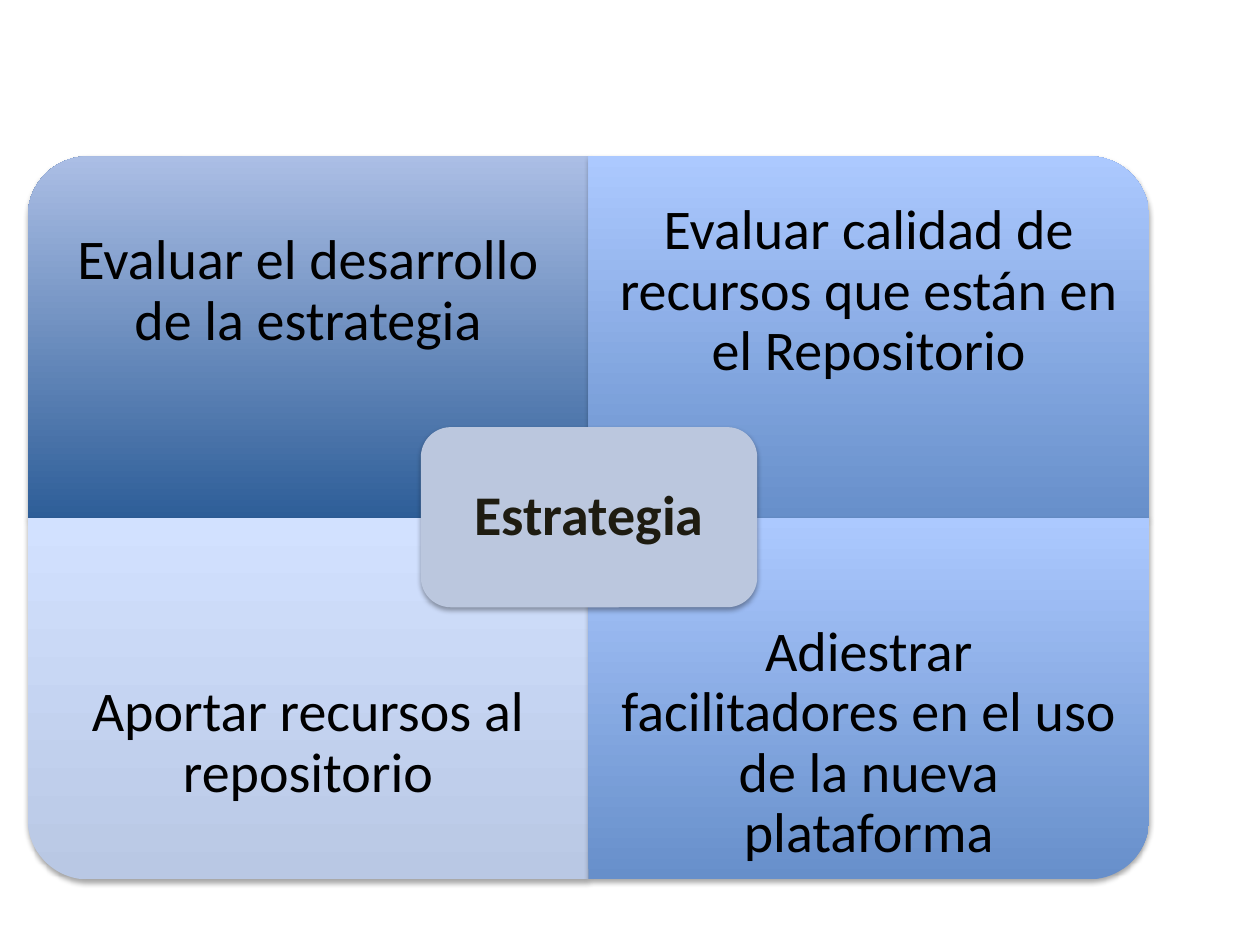
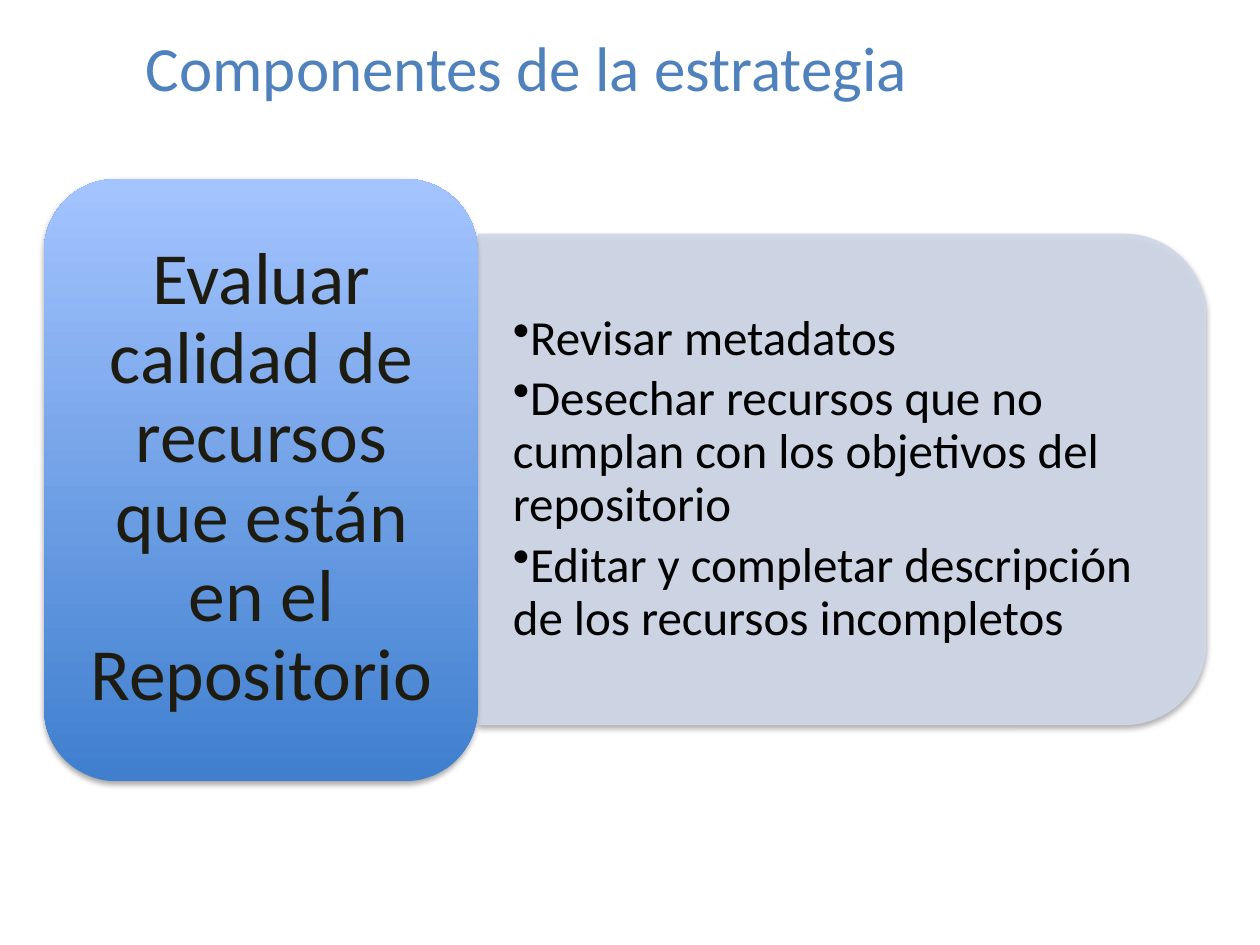
from lxml import etree
from pptx import Presentation
from pptx.dml.color import RGBColor
from pptx.enum import shapes, text
from pptx.oxml import ns
from pptx.util import Inches, Pt

FONT = "Calibri"
COLORS = {
    "black": "000000", "ink": "1E1C11", "title": "4F81BD",
    "hub": "BBC7DE", "detail": "D0D8E8",
    "deep": ("2E5E98", "ABBEE5"), "mid": ("678FCA", "ACC9FF"),
    "pale": ("B9C8E4", "D2E1FF"), "block": ("3F7FCE", "A4C4FF"),
}
CALIDAD = "Evaluar calidad de recursos que están en el Repositorio"


def add_child(parent, tag, **attributes):
    """Append a DrawingML element with the given attributes."""
    child = etree.SubElement(parent, ns.qn(tag))
    for key, value in attributes.items():
        child.set(key, str(value))
    return child


def add_shadow(shape):
    """Give a shape the soft drop shadow that every panel shares."""
    shape.shadow.inherit = False
    effects = shape._element.spPr.find(ns.qn("a:effectLst"))
    shadow = add_child(effects, "a:outerShdw", blurRad=Pt(3.1), dist=Pt(1.8),
                       dir=5400000, rotWithShape=0)
    black = add_child(shadow, "a:srgbClr", val=COLORS["black"])
    add_child(black, "a:alpha", val=35000)


def paint(fill, color, opacity=100):
    """Fill with one colour, or with a (bottom, top) vertical gradient."""
    if isinstance(color, tuple):
        fill.gradient()
        fill.gradient_angle = 90
        for stop, shade in zip(fill.gradient_stops, color):
            stop.color.rgb = RGBColor.from_string(shade)
        return
    fill.solid()
    fill.fore_color.rgb = RGBColor.from_string(color)
    if opacity < 100:
        solid = fill._xPr.find(ns.qn("a:solidFill"))
        add_child(solid[0], "a:alpha", val=opacity * 1000)


def add_panel(slide, preset, box, color, rotation=0, opacity=100, outlined=False):
    """Add a shadowed panel that covers box after its rotation."""
    left, top, width, height = box
    if rotation % 180:
        left, top = left + (width - height) / 2, top + (height - width) / 2
        width, height = height, width
    panel = slide.shapes.add_shape(
        preset, *(Inches(n) for n in (left, top, width, height)))
    panel.rotation = rotation
    paint(panel.fill, color, opacity)
    if outlined:
        panel.line.width = Pt(0.75)
        paint(panel.line.fill, color, opacity)
    else:
        panel.line.fill.background()
    for gradient in panel._element.spPr.findall(ns.qn("a:gradFill")):
        gradient.set("rotWithShape", "0")
    add_shadow(panel)


def add_text(slide, box, *lines, size=32, color="black", bold=False, center=True,
             inset=(0.25, 0.25), spacing=0.9, after=0.35, bullet=False):
    """Add a vertically centred text box with one paragraph per line."""
    frame = slide.shapes.add_textbox(*(Inches(n) for n in box)).text_frame
    frame.word_wrap = True
    frame.vertical_anchor = text.MSO_ANCHOR.MIDDLE
    frame.margin_left = frame.margin_right = Inches(inset[0])
    frame.margin_top = frame.margin_bottom = Inches(inset[1])
    for index, line in enumerate(lines):
        paragraph = frame.paragraphs[0] if index == 0 else frame.add_paragraph()
        paragraph.alignment = text.PP_ALIGN.CENTER if center else text.PP_ALIGN.LEFT
        paragraph.line_spacing = spacing
        paragraph.space_after = Pt(after * size)
        if bullet:
            paragraph.level = 1
            properties = paragraph._p.get_or_add_pPr()
            properties.set("marL", "0")
            properties.set("indent", "0")
            add_child(properties, "a:buChar", char="•")
        run = paragraph.add_run()
        run.text = line
        run.font.name = FONT
        run.font.size = Pt(size)
        run.font.bold = bold
        run.font.color.rgb = RGBColor.from_string(COLORS[color])


def build_strategy(slide):
    """Draw the four quadrants around the strategy hub."""
    left, top, width, height = 0.22, 1.24, 4.45, 2.87
    label_height = 0.75 * height
    quadrants = [
        ("Evaluar el desarrollo de la estrategia", "deep", 270),
        (CALIDAD, "mid", 0),
        ("Aportar recursos al repositorio", "pale", 180),
        ("Adiestrar facilitadores en el uso de la nueva plataforma", "mid", 90),
    ]
    for index, (label, color, rotation) in enumerate(quadrants):
        row, column = divmod(index, 2)
        x, y = left + column * width, top + row * height
        add_panel(slide, shapes.MSO_SHAPE.ROUND_1_RECTANGLE, (x, y, width, height),
                  COLORS[color], rotation)
        label_top = y + row * (height - label_height)
        add_text(slide, (x, label_top, width, label_height), label)
    add_panel(slide, shapes.MSO_SHAPE.ROUNDED_RECTANGLE, (3.34, 3.39, 2.67, 1.43),
              COLORS["hub"])
    add_text(slide, (3.41, 3.46, 2.53, 1.29), "Estrategia", color="ink", bold=True,
             inset=(0.13, 0.13))


def build_components(slide):
    """Draw the quality component and its tasks."""
    add_text(slide, (1.06, 0.23, 8.09, 0.6), "Componentes de la estrategia",
             size=36, color="title", center=False, inset=(0.1, 0.05),
             spacing=1.0, after=0)
    add_panel(slide, shapes.MSO_SHAPE.ROUND_2_SAME_RECTANGLE,
              (3.8, 1.86, 5.77, 3.89), COLORS["detail"], rotation=90,
              opacity=90, outlined=True)
    add_text(slide, (3.8, 2.05, 5.58, 3.51),
             "Revisar metadatos",
             "Desechar recursos que no cumplan con los objetivos del repositorio",
             "Editar y completar descripción de los recursos incompletos",
             size=28, center=False, inset=(0.27, 0.14), after=0.15, bullet=True)
    add_panel(slide, shapes.MSO_SHAPE.ROUNDED_RECTANGLE, (0.35, 1.42, 3.44, 4.78),
              COLORS["block"])
    add_text(slide, (0.52, 1.58, 3.11, 4.44), CALIDAD, size=42, color="ink",
             inset=(0.17, 0.09))


def main():
    """Build and save the presentation."""
    deck = Presentation()
    deck.slide_width, deck.slide_height = Inches(10), Inches(7.5)
    for build in (build_strategy, build_components):
        build(deck.slides.add_slide(deck.slide_layouts[6]))
    deck.save("out.pptx")


if __name__ == "__main__":
    main()
